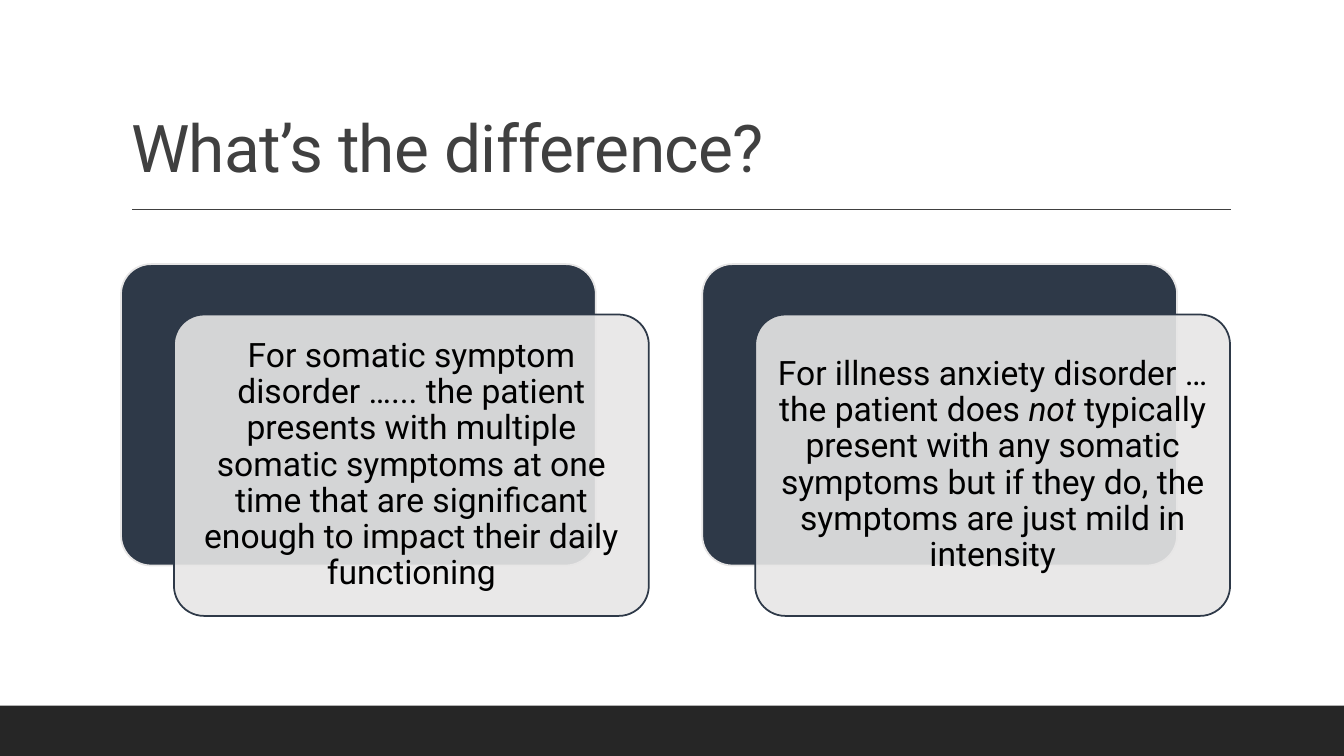
import pptx
import pptx.dml.color
import pptx.enum.shapes
import pptx.enum.text
import pptx.oxml
import pptx.oxml.ns
import pptx.util

Inches = pptx.util.Inches
Pt = pptx.util.Pt
Shapes = pptx.enum.shapes.MSO_SHAPE
Align = pptx.enum.text.PP_ALIGN
Anchor = pptx.enum.text.MSO_ANCHOR

WHITE, BLACK = "FFFFFF", "000000"
GREY, CHARCOAL = "404040", "262626"
NAVY, SILVER = "2E3948", "E7E6E6"

CARD_LEFT, CARD_TOP, CARD_PITCH = 1.2, 2.62, 5.765
CARD_SIZE = (4.71, 2.99)
OFFSET_X, OFFSET_Y = 0.525, 0.5

# Each card is a list of (text, italic) runs
CARDS = [
    [("For somatic symptom disorder …... the patient presents with multiple "
      "somatic symptoms at one time that are significant enough to impact "
      "their daily functioning", False)],
    [("For illness anxiety disorder … the patient does ", False),
     ("not ", True),
     ("typically present with any somatic symptoms but if they do, the "
      "symptoms are just mild in intensity", False)],
]


def color(hex_string):
    return pptx.dml.color.RGBColor.from_string(hex_string)


def set_format(target, values):
    for name, value in values.items():
        setattr(target, name, value)


def set_fill(fill, hex_string):
    fill.solid()
    fill.fore_color.rgb = color(hex_string)


def add_text(text_frame, runs, frame_format, paragraph_format, font_format, hex_string):
    set_format(text_frame, frame_format)
    paragraph = text_frame.paragraphs[0]
    set_format(paragraph, paragraph_format)
    for text, italic in runs:
        run = paragraph.add_run()
        run.text = text
        set_format(run.font, {"name": "Roboto", "italic": italic, **font_format})
        run.font.color.rgb = color(hex_string)
    return paragraph


def add_box(slide, kind, left, top, width, height, fill, line=None):
    shape = slide.shapes.add_shape(
        kind, Inches(left), Inches(top), Inches(width), Inches(height))
    shape.shadow.inherit = False
    set_fill(shape.fill, fill)
    if line:
        shape.line.color.rgb = color(line)
        shape.line.width = Pt(1.25)
    else:
        shape.line.fill.background()
    return shape


def set_opacity(shape, percent):
    fill_color = shape._element.spPr.find(".//" + pptx.oxml.ns.qn("a:srgbClr"))
    alpha = pptx.oxml.parse_xml(
        f'<a:alpha {pptx.oxml.ns.nsdecls("a")} val="{percent * 1000}"/>')
    fill_color.append(alpha)


def add_title(slide, text):
    title = slide.shapes.title
    set_format(title, {"left": Inches(1.2), "top": Inches(0.31),
                       "width": Inches(11), "height": Inches(1.59)})
    paragraph = add_text(
        title.text_frame, [(text, False)],
        {"vertical_anchor": Anchor.BOTTOM, "word_wrap": True,
         "auto_size": pptx.enum.text.MSO_AUTO_SIZE.NONE},
        {"alignment": Align.LEFT, "line_spacing": 0.9},
        {"size": Pt(47)}, GREY)
    # Slightly tightened letter spacing
    paragraph.runs[0]._r.get_or_add_rPr().set("spc", "-50")


def add_rule(slide, left, right, y):
    rule = slide.shapes.add_connector(
        pptx.enum.shapes.MSO_CONNECTOR.STRAIGHT,
        Inches(left), Inches(y), Inches(right), Inches(y))
    rule.line.color.rgb = color(GREY)
    rule.line.width = Pt(1)
    rule._element.spPr.append(pptx.oxml.parse_xml(
        f'<a:effectLst {pptx.oxml.ns.nsdecls("a")}/>'))


def add_card(slide, left, top, runs):
    backing = add_box(slide, Shapes.ROUNDED_RECTANGLE, left, top, *CARD_SIZE,
                      NAVY, SILVER)
    front = add_box(slide, Shapes.ROUNDED_RECTANGLE, left + OFFSET_X,
                    top + OFFSET_Y, *CARD_SIZE, SILVER, NAVY)
    for shape in (backing, front):
        shape.adjustments[0] = 0.1
    set_opacity(front, 90)
    margins = {f"margin_{side}": Inches(0.1)
               for side in ("left", "right", "top", "bottom")}
    add_text(front.text_frame, runs,
             {"vertical_anchor": Anchor.MIDDLE, "word_wrap": True, **margins},
             {"alignment": Align.CENTER, "line_spacing": 0.9},
             {"size": Pt(24)}, BLACK)


def main():
    presentation = pptx.Presentation()
    set_format(presentation, {"slide_width": Inches(13.33),
                              "slide_height": Inches(7.5)})
    slide = presentation.slides.add_slide(presentation.slide_layouts[5])
    set_fill(slide.background.fill, WHITE)

    # Heading and footer band
    add_title(slide, "What’s the difference?")
    add_rule(slide, 1.31, 12.21, 2.08)
    add_box(slide, Shapes.RECTANGLE, 0, 7, 13.33, 0.5, CHARCOAL)

    # Comparison cards
    for index, runs in enumerate(CARDS):
        add_card(slide, CARD_LEFT + index * CARD_PITCH, CARD_TOP, runs)

    presentation.save("out.pptx")


if __name__ == "__main__":
    main()
